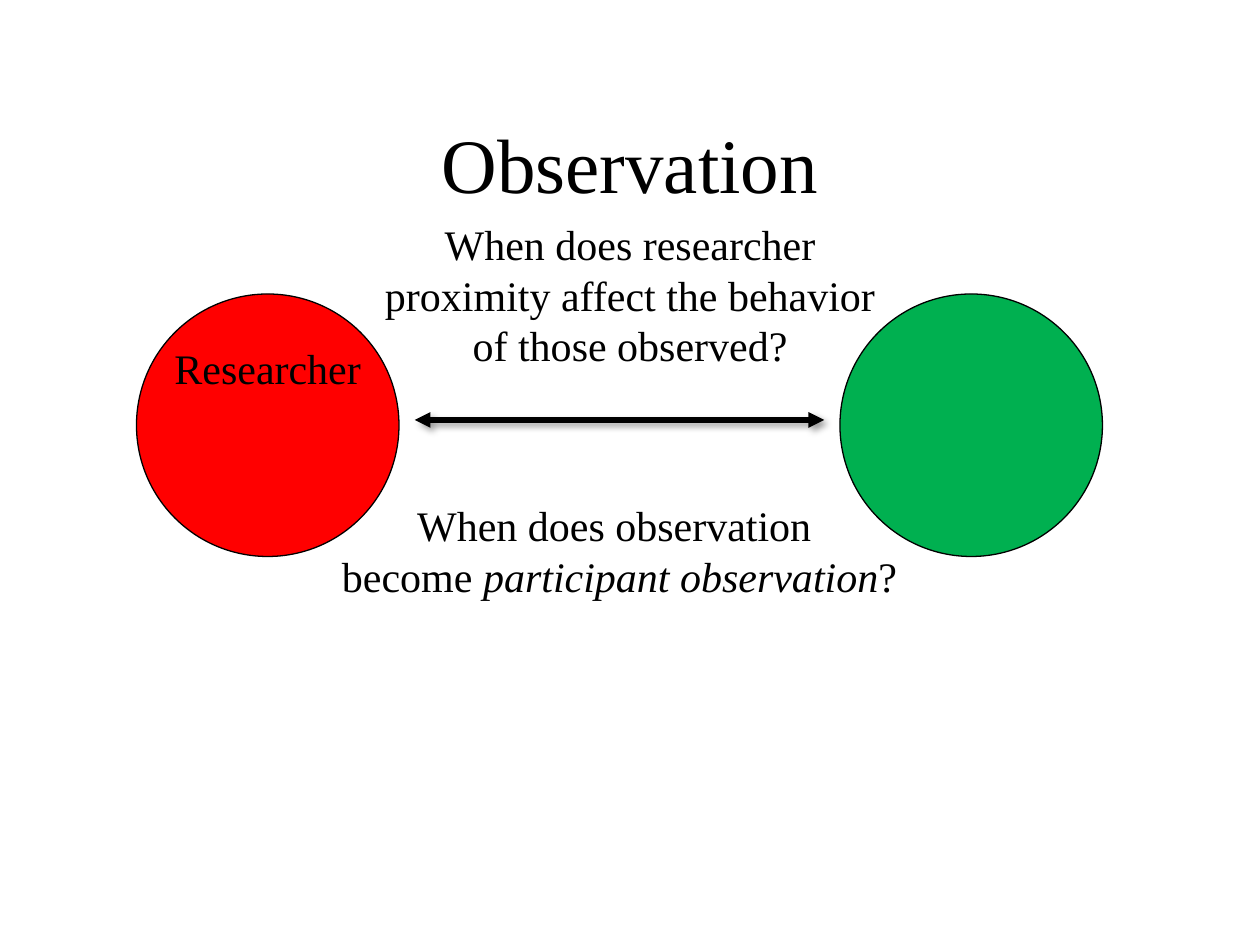
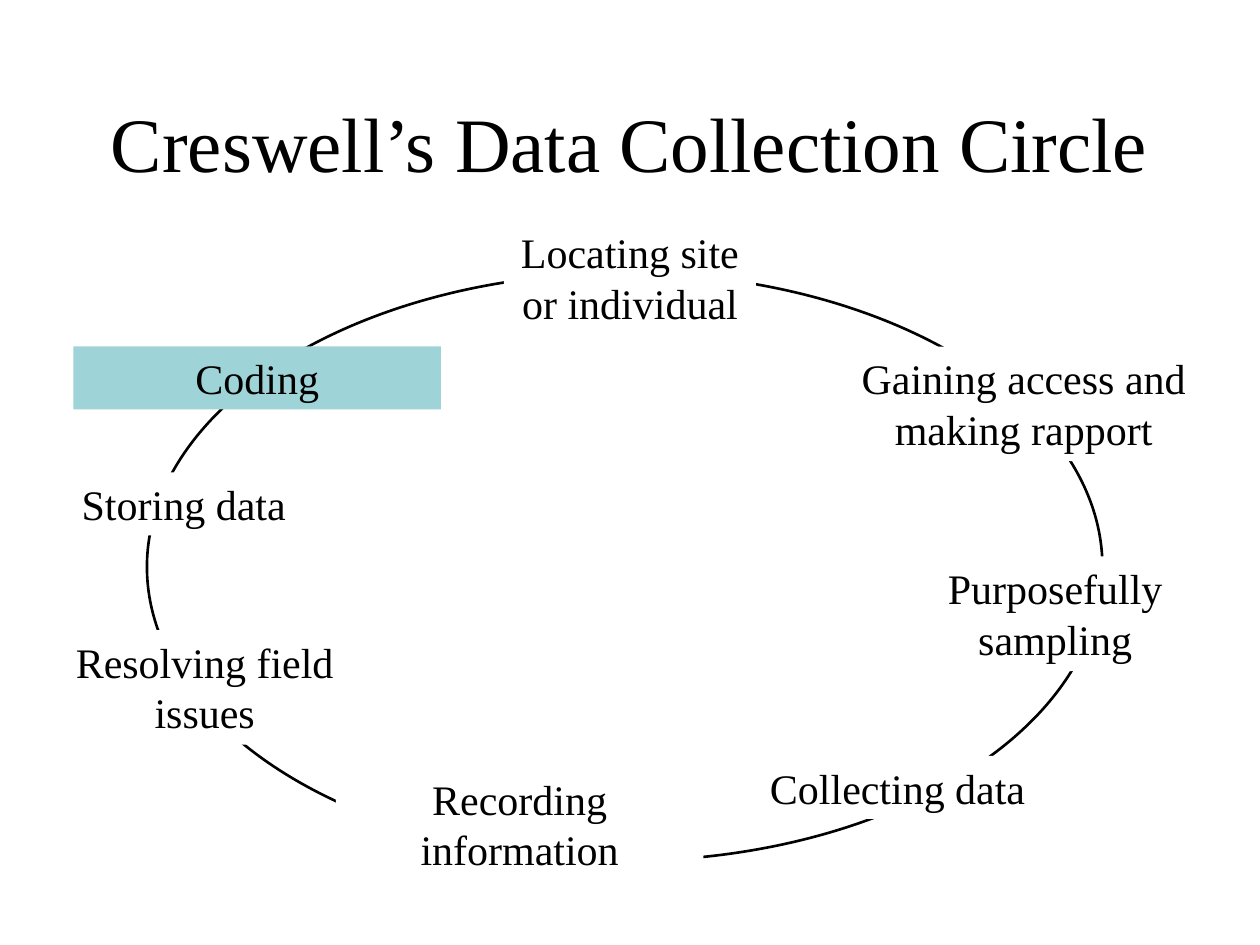
from lxml.etree import SubElement
from pptx import Presentation
from pptx.dml.color import RGBColor
from pptx.enum.shapes import MSO_CONNECTOR as Link, MSO_SHAPE as Kind
from pptx.enum.text import MSO_ANCHOR as Anchor, MSO_AUTO_SIZE as Auto, PP_ALIGN as Align
from pptx.oxml.ns import qn
from pptx.util import Pt

INK, PAPER, TEAL = "000000", "FFFFFF", "9ED3D7"
RED, GREEN = "FF0000", "00B050"
FACE = "Times New Roman"
FRAME = dict(word_wrap=True, auto_size=Auto.NONE)
LINES = {1: 36, 2: 65.5, 3: 94.5}
WIDE = 210

HEADS = [("Observation", 48), ("Creswell’s Data Collection Circle", 36)]
DISCS = [(78, RED), (480, GREEN)]
NOTES = [
    (81, 192, 144, 1, [("Researcher", False)]),
    (209.5, 121.5, 301, 3,
     [("When does researcher proximity affect the behavior of those observed?", False)]),
    (180, 282, 348, 2,
     [("When does observation \vbecome ", False),
      ("participant observation", True), ("?", False)]),
]
ARROW = (237, 471, 240)
RING = (84, 156, 546, 336)
STEPS = [
    ("Locating site or individual", 288, 126, 144, 2, PAPER),
    ("Gaining access and making rapport", 480, 198, WIDE, 2, PAPER),
    ("Purposefully sampling", 498, 318, WIDE, 2, PAPER),
    ("Collecting data", 408, 432, WIDE, 1, PAPER),
    ("Recording information", 192, 438.5, WIDE, 2, PAPER),
    ("Resolving field issues", 12, 360, WIDE, 2, PAPER),
    ("Storing data", 0, 270, WIDE, 1, PAPER),
    ("Coding", 42, 198, WIDE, 1, TEAL),
]


def color(code):
    return RGBColor.from_string(code)


def apply(item, style):
    for key, value in style.items():
        setattr(item, key, value)


def write(shape, runs, size=24, anchor=Anchor.TOP):
    frame = shape.text_frame
    apply(frame, FRAME | dict(vertical_anchor=anchor))
    para = frame.paragraphs[0]
    para.alignment = Align.CENTER
    for text, slant in runs:
        for index, part in enumerate(text.split("\v")):
            if index:
                para.add_line_break()
            run = para.add_run()
            run.text = part
            apply(run.font, dict(name=FACE, size=Pt(size), italic=slant, bold=False))
            run.font.color.rgb = color(INK)


def start(deck, text, top):
    slide = deck.slides.add_slide(deck.slide_layouts[5])
    title = slide.shapes.title
    apply(title, dict(left=Pt(54), top=Pt(top), width=Pt(612), height=Pt(90)))
    write(title, [(text, False)], 44, Anchor.MIDDLE)
    return slide


def draw(slide, kind, box, fill=None, edge=None):
    shape = slide.shapes.add_shape(kind, *map(Pt, box))
    shape.shadow.inherit = False
    if fill:
        shape.fill.solid()
        shape.fill.fore_color.rgb = color(fill)
    else:
        shape.fill.background()
    if edge:
        shape.line.width = Pt(edge)
        shape.line.color.rgb = color(INK)
    else:
        shape.line.fill.background()
    return shape


def arrow(slide, left, right, y):
    link = slide.shapes.add_connector(Link.STRAIGHT, *map(Pt, (left, y, right, y)))
    link.line.width = Pt(3)
    link.line.color.rgb = color(INK)
    stroke = link.line._get_or_add_ln()
    for end in ("headEnd", "tailEnd"):
        SubElement(stroke, qn("a:" + end), type="triangle")
    effect = SubElement(link._element.spPr, qn("a:effectLst"))
    shade = SubElement(effect, qn("a:outerShdw"), blurRad=str(Pt(4)),
                       dist=str(Pt(3)), dir="2700000", rotWithShape="0")
    tint = SubElement(shade, qn("a:srgbClr"), val=INK)
    SubElement(tint, qn("a:alpha"), val="40000")


def main():
    deck = Presentation()
    apply(deck, dict(slide_width=Pt(720), slide_height=Pt(540)))
    watch, cycle = [start(deck, *head) for head in HEADS]

    for left, fill in DISCS:
        draw(watch, Kind.OVAL, (left, 168, 150, 150), fill, 0.75)
    arrow(watch, *ARROW)
    for left, top, width, rows, runs in NOTES:
        box = map(Pt, (left, top, width, LINES[rows]))
        write(watch.shapes.add_textbox(*box), runs)

    draw(cycle, Kind.OVAL, RING, edge=1.5)
    for text, left, top, width, rows, fill in STEPS:
        step = draw(cycle, Kind.RECTANGLE, (left, top, width, LINES[rows]), fill)
        write(step, [(text, False)])

    deck.save("out.pptx")


if __name__ == "__main__":
    main()
